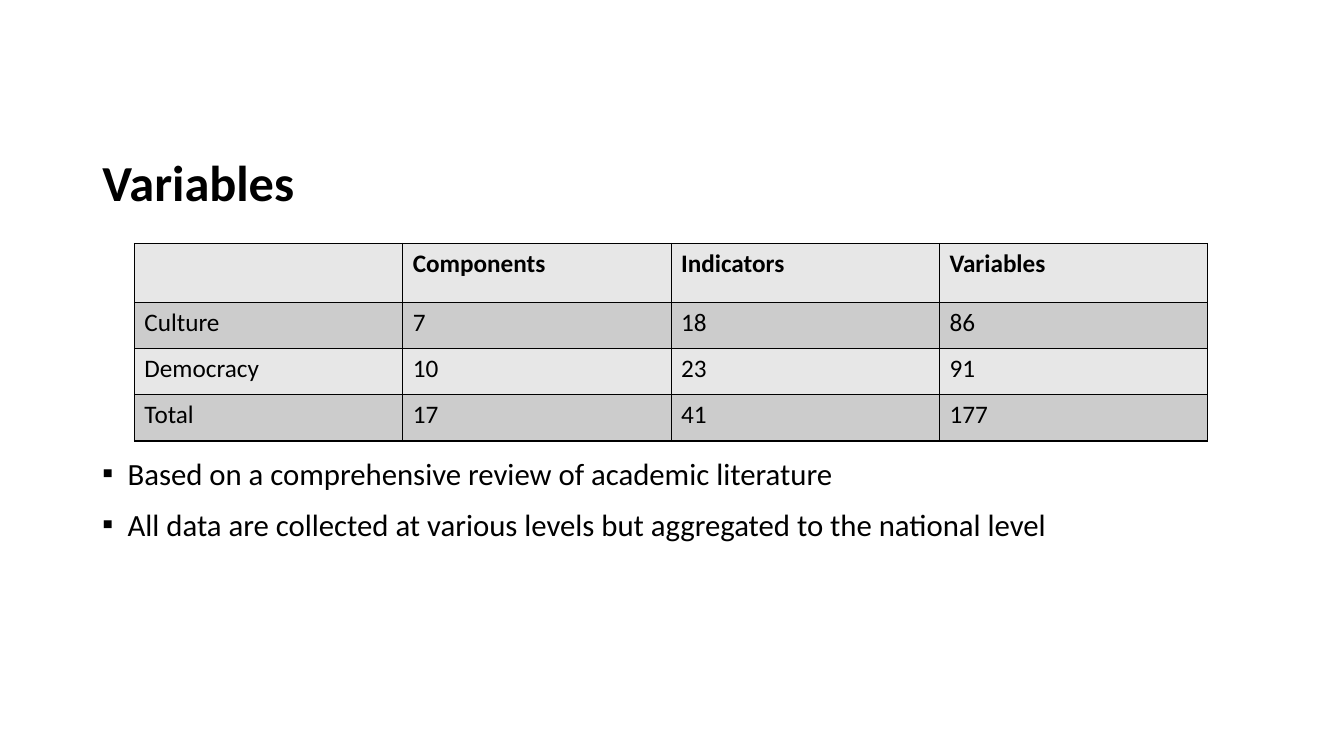
from dataclasses import dataclass

from lxml import etree
from pptx import Presentation
from pptx import util as u
from pptx.dml.color import RGBColor
from pptx.enum import text as t
from pptx.oxml import ns

# Grid of 160 columns by 90 rows
SLIDE_WIDTH, SLIDE_HEIGHT = u.Inches(13.333), u.Inches(7.5)
GRID_COLUMNS, GRID_ROWS = 160, 90


@dataclass(frozen=True)
class Theme:
    font: str = "Calibri"
    ink: RGBColor = RGBColor(0, 0, 0)
    light: RGBColor = RGBColor(0xE7, 0xE7, 0xE7)
    dark: RGBColor = RGBColor(0xCC, 0xCC, 0xCC)
    title_size: int = 36
    body_size: int = 22
    table_size: int = 18
    border: int = 1


@dataclass(frozen=True)
class Area:
    column: float
    row: float
    columns: float
    rows: float


@dataclass(frozen=True)
class TableRow:
    values: tuple[str, ...]
    height: float = 5.5
    bold: bool = False


@dataclass(frozen=True)
class Bullet:
    wording: str
    line_spacing: float
    space_before: int


THEME = Theme()
TITLE_AREA = Area(11, 18.7, 138, 6.6)
BODY_AREA = Area(11, 49.1, 138, 31.9)
TABLE_AREA = Area(16, 29, 127.8, 23.5)
TABLE_ROWS = (
    TableRow(("", "Components", "Indicators", "Variables"), height=7, bold=True),
    TableRow(("Culture", "7", "18", "86")),
    TableRow(("Democracy", "10", "23", "91")),
    TableRow(("Total", "17", "41", "177")),
)
BULLETS = (
    Bullet("Based on a comprehensive review of academic literature", 2.0, 0),
    Bullet("All data are collected at various levels but aggregated to the national level", 1.0, 10),
)


def across(columns: float) -> int:
    return round(SLIDE_WIDTH * columns / GRID_COLUMNS)


def down(rows: float) -> int:
    return round(SLIDE_HEIGHT * rows / GRID_ROWS)


def place(box, area: Area) -> None:
    box.left, box.top = across(area.column), down(area.row)
    box.width, box.height = across(area.columns), down(area.rows)


def add_span(para, wording: str, size: int, bold: bool = False) -> None:
    span = para.add_run()
    span.text = wording
    span.font.name, span.font.size = THEME.font, u.Pt(size)
    span.font.bold = bold
    span.font.color.rgb = THEME.ink


def add_border(cell) -> None:
    properties = cell._tc.get_or_add_tcPr()
    for position, side in enumerate(("lnL", "lnR", "lnT", "lnB")):
        line = etree.Element(ns.qn(f"a:{side}"), w=str(u.Pt(THEME.border)))
        fill = etree.SubElement(line, ns.qn("a:solidFill"))
        etree.SubElement(fill, ns.qn("a:srgbClr"), val=str(THEME.ink))
        properties.insert(position, line)


def draw_title(page, wording: str) -> None:
    box = page.shapes.title
    place(box, TITLE_AREA)
    frame = box.text_frame
    frame.auto_size = t.MSO_AUTO_SIZE.NONE
    frame.vertical_anchor = t.MSO_ANCHOR.MIDDLE
    para = frame.paragraphs[0]
    para.alignment, para.line_spacing = t.PP_ALIGN.LEFT, 0.9
    add_span(para, wording, THEME.title_size, bold=True)


def draw_bullets(page, bullets: tuple[Bullet, ...]) -> None:
    box = page.placeholders[1]
    place(box, BODY_AREA)
    frame = box.text_frame
    frame.auto_size = t.MSO_AUTO_SIZE.NONE
    for index, bullet in enumerate(bullets):
        para = frame.add_paragraph() if index else frame.paragraphs[0]
        para.line_spacing = bullet.line_spacing
        para.space_before = u.Pt(bullet.space_before)
        properties = para._p.get_or_add_pPr()
        properties.set("marL", str(u.Inches(0.25)))
        properties.set("indent", str(u.Inches(-0.25)))
        etree.SubElement(properties, ns.qn("a:buFont"), typeface=THEME.font)
        etree.SubElement(properties, ns.qn("a:buChar"), char="▪")
        add_span(para, bullet.wording, THEME.body_size)


def draw_table(page, rows: tuple[TableRow, ...]) -> None:
    column_count = len(rows[0].values)
    table = page.shapes.add_table(
        len(rows), column_count,
        across(TABLE_AREA.column), down(TABLE_AREA.row),
        across(TABLE_AREA.columns), down(TABLE_AREA.rows),
    ).table
    for column in table.columns:
        column.width = across(TABLE_AREA.columns / column_count)
    for row_index, row in enumerate(rows):
        table.rows[row_index].height = down(row.height)
        for column_index, value in enumerate(row.values):
            cell = table.cell(row_index, column_index)
            cell.fill.solid()
            cell.fill.fore_color.rgb = THEME.dark if row_index % 2 else THEME.light
            add_border(cell)
            if value:
                add_span(cell.text_frame.paragraphs[0], value, THEME.table_size, row.bold)


def main() -> None:
    deck = Presentation()
    deck.slide_width, deck.slide_height = SLIDE_WIDTH, SLIDE_HEIGHT
    page = deck.slides.add_slide(deck.slide_layouts[1])
    # Heading and list
    draw_title(page, "Variables")
    draw_bullets(page, BULLETS)
    # Counts by topic
    draw_table(page, TABLE_ROWS)
    deck.save("out.pptx")


if __name__ == "__main__":
    main()
